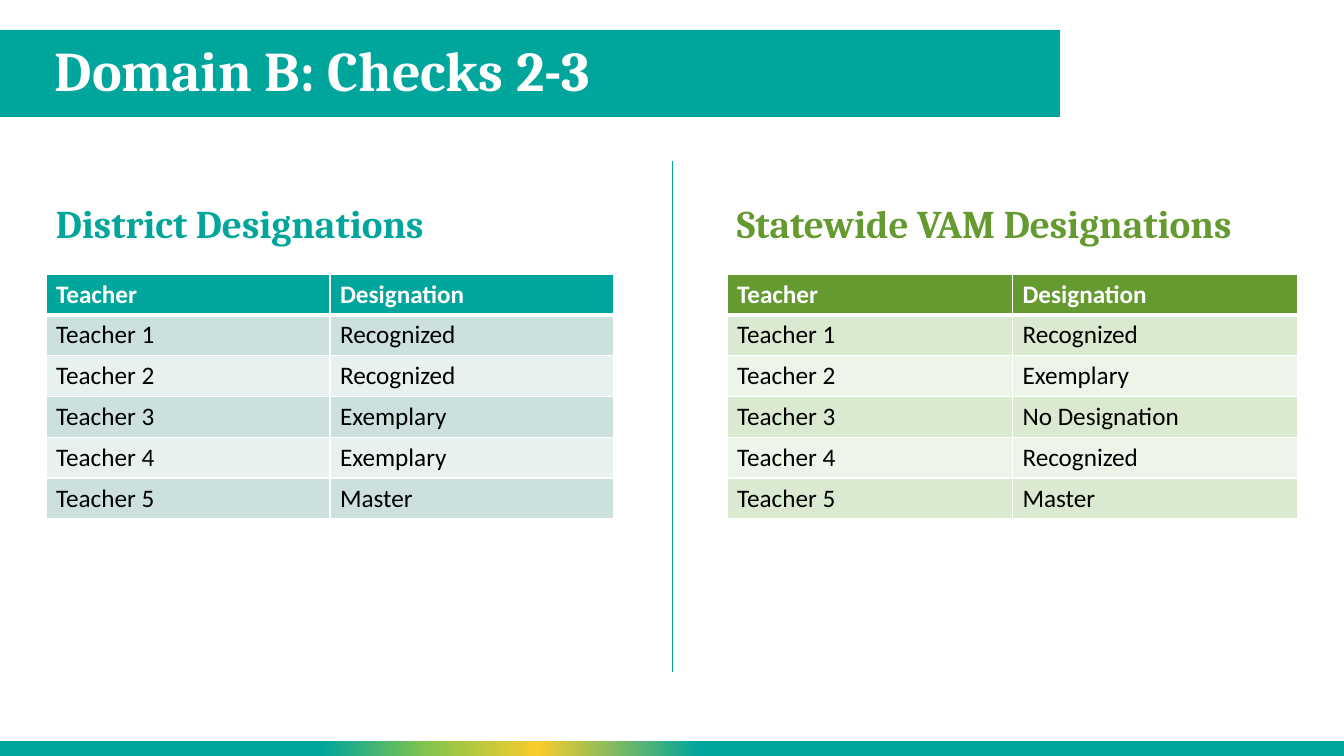
from collections import namedtuple

from lxml import etree
from pptx import Presentation
from pptx.dml.color import RGBColor
from pptx.enum.shapes import MSO_CONNECTOR, MSO_SHAPE
from pptx.enum.text import MSO_ANCHOR as Anchor
from pptx.oxml.ns import qn
from pptx.util import Pt

SCALE = 914400 / 100.8
Box = namedtuple("Box", "left top width height")
TEAL, GREEN, LIME, YELLOW = "00A69B", "659A31", "87C54A", "F8CC2B"
WHITE, BLACK = "FFFFFF", "000000"
FOOTER_STOPS = [(0, TEAL), (24, TEAL), (32, LIME), (40, YELLOW), (52, TEAL), (100, TEAL)]

TEACHERS = [f"Teacher {number}" for number in range(1, 6)]
DISTRICT = ["Recognized", "Recognized", "Exemplary", "Exemplary", "Master"]
STATEWIDE = ["Recognized", "Exemplary", "No Designation", "Recognized", "Master"]


def px(length):
    return round(length * SCALE)


def emu(box):
    return [px(length) for length in box]


def color(value):
    return RGBColor.from_string(value)


def style(para, font, size, value, bold):
    for span in para.runs:
        span.font.name = font
        span.font.size = Pt(size)
        span.font.bold = bold
        span.font.color.rgb = color(value)


def add_bar(page, box):
    bar = page.shapes.add_shape(MSO_SHAPE.RECTANGLE, *emu(box))
    bar.shadow.inherit = False
    bar.line.fill.background()
    bar.fill.solid()
    bar.fill.fore_color.rgb = color(TEAL)
    return bar


def add_heading(page, box, text, size, value, anchor):
    frame = page.shapes.add_textbox(*emu(box)).text_frame
    frame.word_wrap = True
    frame.vertical_anchor = anchor
    frame.text = text
    para = frame.paragraphs[0]
    para.line_spacing = 0.9
    style(para, "Cambria", size, value, True)


def add_title(page, box, text):
    add_bar(page, box)
    inner = Box(box.left + 45, box.top, box.width - 47, box.height)
    add_heading(page, inner, text, 40, WHITE, Anchor.MIDDLE)


def add_footer(page, box):
    bar = add_bar(page, box)
    bar.fill.gradient()
    bar.fill.gradient_angle = 0
    stops = bar._element.spPr.find(qn("a:gradFill")).find(qn("a:gsLst"))
    for stop in list(stops):
        stops.remove(stop)
    for percent, value in FOOTER_STOPS:
        stop = etree.SubElement(stops, qn("a:gs"), pos=str(percent * 1000))
        etree.SubElement(stop, qn("a:srgbClr"), val=value)


def add_divider(page, box):
    left, top, _, height = emu(box)
    divider = page.shapes.add_connector(MSO_CONNECTOR.STRAIGHT, left, top, left, top + height)
    divider.line.color.rgb = color(TEAL)
    divider.line.width = Pt(0.5)
    etree.SubElement(divider._element.spPr, qn("a:effectLst"))


def add_borders(cell, top, bottom):
    properties = cell._tc.get_or_add_tcPr()
    for index, (side, width) in enumerate([("L", 1), ("R", 1), ("T", top), ("B", bottom)]):
        border = etree.Element(qn(f"a:ln{side}"), w=str(Pt(width)))
        fill = etree.SubElement(border, qn("a:solidFill"))
        etree.SubElement(fill, qn("a:srgbClr"), val=WHITE)
        properties.insert(index, border)


def add_designations(page, box, rows, fills):
    header_fill, *bands = fills
    table = page.shapes.add_table(len(rows), 2, *emu(box)).table
    for row_index, values in enumerate(rows):
        is_header = row_index == 0
        for column_index, text in enumerate(values):
            cell = table.cell(row_index, column_index)
            cell.text = text
            style(cell.text_frame.paragraphs[0], "Calibri", 18,
                  WHITE if is_header else BLACK, is_header)
            cell.fill.solid()
            cell.fill.fore_color.rgb = color(
                header_fill if is_header else bands[(row_index - 1) % 2])
            add_borders(cell, 3 if row_index == 1 else 1, 3 if is_header else 1)


def add_panel(page, box, heading, designations, fills):
    heading_box = Box(box.left, box.top, box.width, 91)
    add_heading(page, heading_box, heading, 28, fills[0], Anchor.BOTTOM)
    rows = [("Teacher", "Designation"), *zip(TEACHERS, designations)]
    table_box = Box(box.left, box.top + 113, box.width, box.height - 113)
    add_designations(page, table_box, rows, fills)


def main():
    deck = Presentation()
    deck.slide_width, deck.slide_height = px(1344), px(756)
    page = deck.slides.add_slide(deck.slide_layouts[6])
    add_title(page, Box(0, 30, 1060, 87), "Domain B: Checks 2-3")
    add_footer(page, Box(0, 741, 1344, 15))
    add_divider(page, Box(672, 161, 0, 511))
    add_panel(page, Box(46, 161, 568, 358), "District Designations",
              DISTRICT, (TEAL, "CCE1DE", "E7F1EF"))
    add_panel(page, Box(727, 161, 571, 358), "Statewide VAM Designations",
              STATEWIDE, (GREEN, "D9EAD0", "EDF5E9"))
    deck.save("out.pptx")


if __name__ == "__main__":
    main()
